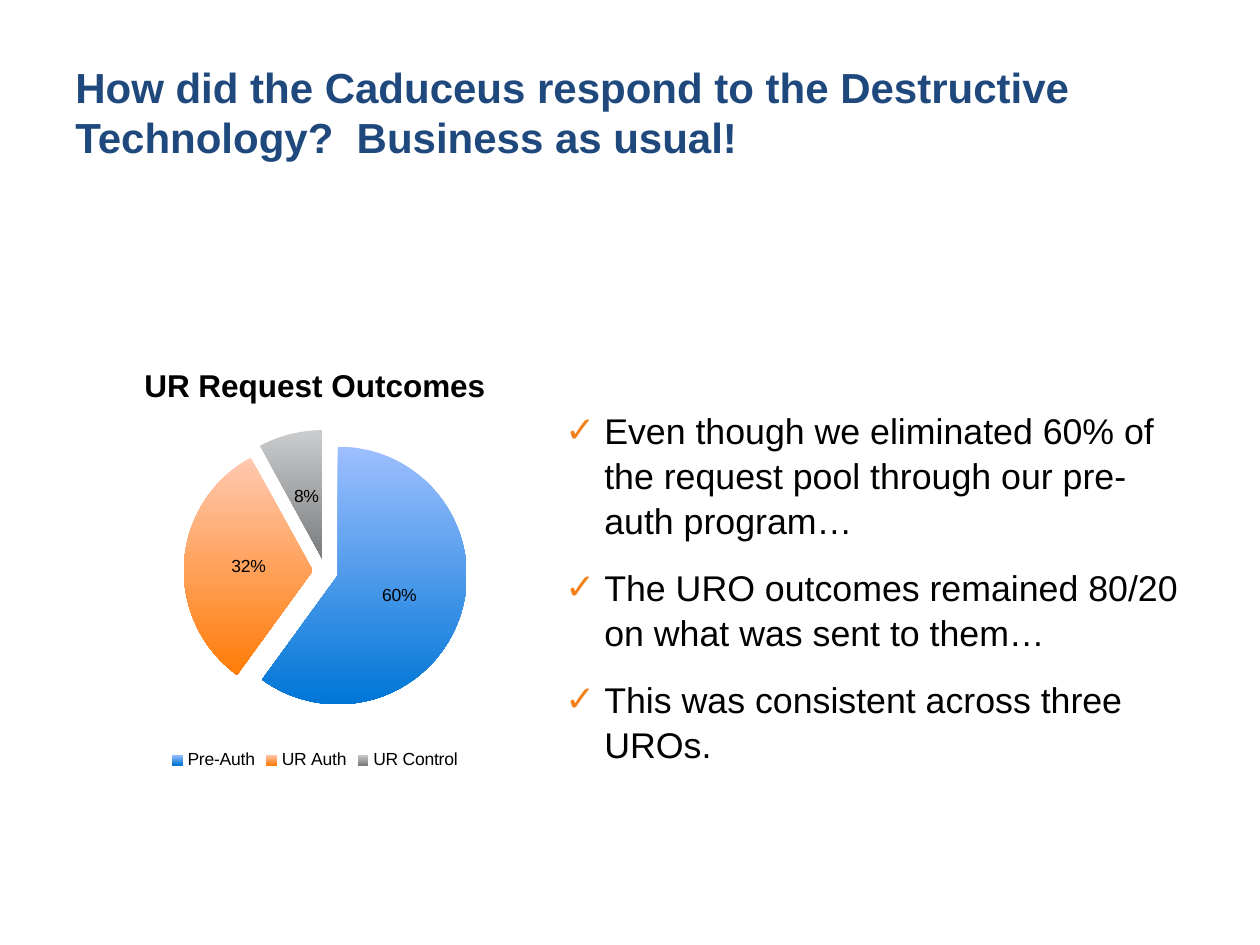
from lxml import etree
from pptx import Presentation
from pptx import util as u
from pptx.chart.data import CategoryChartData
from pptx.dml.color import RGBColor
from pptx.enum import chart as ch, text
from pptx.oxml import parse_xml
from pptx.oxml.ns import nsdecls, qn

PX = u.Inches(1) / 126
FONT = "Arial"
BLACK = RGBColor(0x00, 0x00, 0x00)
NAVY = RGBColor(0x1F, 0x49, 0x7D)
ORANGE = RGBColor(0xF3, 0x81, 0x18)
SLICE_GRADIENTS = [
    (RGBColor(0x9D, 0xBF, 0xFF), RGBColor(0x00, 0x76, 0xD6)),
    (RGBColor(0xFF, 0xC8, 0xB0), RGBColor(0xFF, 0x7C, 0x08)),
    (RGBColor(0xCA, 0xCC, 0xCD), RGBColor(0x7A, 0x7C, 0x7E)),
]
OUTCOMES = {"Pre-Auth": 0.6, "UR Auth": 0.32, "UR Control": 0.08}
FINDINGS = [
    "Even though we eliminated 60% of the request pool through our pre-auth program…",
    "The URO outcomes remained 80/20 on what was sent to them…",
    "This was consistent across three UROs.",
]


def px(length):
    return u.Emu(round(length * PX))


def style(font, size, color, bold=False):
    font.name, font.size, font.bold = FONT, u.Pt(size), bold
    font.color.rgb = color


def add_text_frame(slide, box):
    frame = slide.shapes.add_textbox(*map(px, box)).text_frame
    frame.word_wrap = True
    return frame


def add_run(paragraph, wording, size, color, bold=False):
    run = paragraph.add_run()
    run.text = wording
    style(run.font, size, color, bold)


def add_heading(slide, box):
    frame = add_text_frame(slide, box)
    frame.vertical_anchor = text.MSO_ANCHOR.MIDDLE
    add_run(frame.paragraphs[0],
            "How did the Caduceus respond to the Destructive Technology?  Business as usual!",
            24, NAVY, True)


def add_check_bullet(paragraph, indent):
    properties = paragraph._p.get_or_add_pPr()
    properties.set("marL", str(px(indent)))
    properties.set("indent", str(px(-indent)))
    for bullet in (
        f'<a:buClr {nsdecls("a")}><a:srgbClr val="{ORANGE}"/></a:buClr>',
        f'<a:buFont {nsdecls("a")} typeface="{FONT}"/>',
        f'<a:buChar {nsdecls("a")} char="✓"/>',
    ):
        properties.append(parse_xml(bullet))


def add_findings(slide, box):
    frame = add_text_frame(slide, box)
    for index, finding in enumerate(FINDINGS):
        paragraph = frame.add_paragraph() if index else frame.paragraphs[0]
        paragraph.line_spacing = 1.05
        if index:
            paragraph.space_before = u.Pt(12.7)
        add_check_bullet(paragraph, 39)
        add_run(paragraph, finding, 20.4, BLACK)


def set_plot_layout(chart, **fractions):
    """Fix the inner plot area as fractions of the chart."""
    plot_area = chart._chartSpace.chart.plotArea
    for old in plot_area.findall(qn("c:layout")):
        plot_area.remove(old)
    layout = etree.Element(qn("c:layout"))
    manual = etree.SubElement(layout, qn("c:manualLayout"))
    settings = {"layoutTarget": "inner", "xMode": "edge", "yMode": "edge", **fractions}
    for tag, value in settings.items():
        etree.SubElement(manual, qn(f"c:{tag}")).set("val", str(value))
    plot_area.insert(0, layout)


def explode_slices(series, percent):
    explosion = etree.Element(qn("c:explosion"))
    explosion.set("val", str(percent))
    series._element.find(qn("c:tx")).addnext(explosion)


def add_outcomes_pie(slide, box):
    data = CategoryChartData(number_format="0%")
    data.categories = list(OUTCOMES)
    data.add_series("Series 1", list(OUTCOMES.values()))
    chart = slide.shapes.add_chart(ch.XL_CHART_TYPE.PIE, *map(px, box), data).chart
    style(chart.font, 10, BLACK)

    chart.has_title = True
    add_run(chart.chart_title.text_frame.paragraphs[0], "UR Request Outcomes", 18, BLACK, True)
    chart.chart_title.include_in_layout = False
    chart.has_legend = True
    chart.legend.position = ch.XL_LEGEND_POSITION.BOTTOM
    chart.legend.include_in_layout = False
    set_plot_layout(chart, x=0.292, y=0.153, w=0.45, h=0.75)

    pie = chart.plots[0]
    pie.vary_by_categories = True
    pie.has_data_labels = True
    labels = pie.data_labels
    labels.show_value, labels.show_percentage = True, False
    labels.number_format, labels.number_format_is_linked = "0%", False
    labels.position = ch.XL_LABEL_POSITION.CENTER
    style(labels.font, 10, BLACK)

    series = pie.series[0]
    explode_slices(series, 10)
    for index, colors in enumerate(SLICE_GRADIENTS):
        fill = series.points[index].format.fill
        fill.gradient()
        fill.gradient_angle = 270
        for stop, color in zip(fill.gradient_stops, colors):
            stop.color.rgb = color


def main():
    deck = Presentation()
    deck.slide_width, deck.slide_height = px(1260), px(945)
    slide = deck.slides.add_slide(deck.slide_layouts[6])
    add_heading(slide, (63, 54, 1134, 116))
    add_findings(slide, (553, 400, 644, 321))
    add_outcomes_pie(slide, (0, 344, 630, 431))
    deck.save("out.pptx")


if __name__ == "__main__":
    main()
